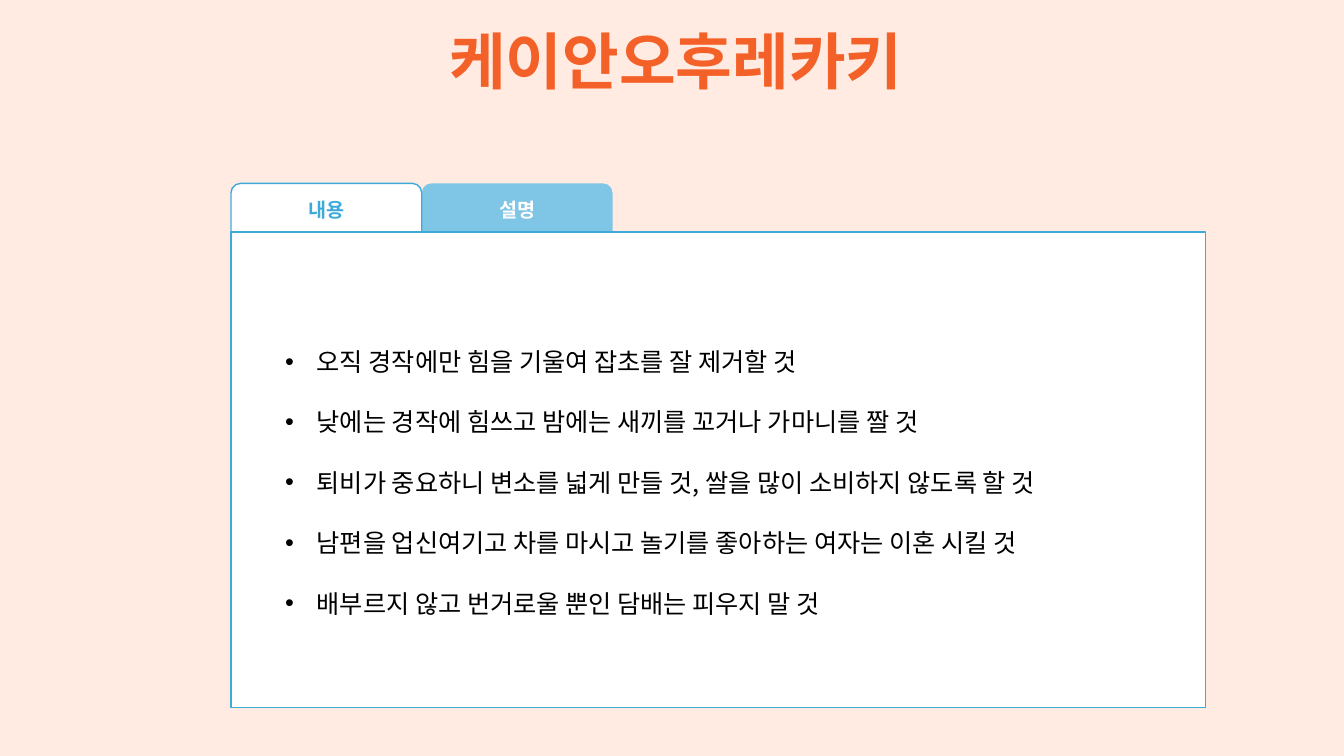
"""Build a slide with a title and a tabbed panel of bulleted rules."""
from pptx import Presentation
from pptx.dml.color import RGBColor
from pptx.enum.shapes import MSO_SHAPE as SHAPE
from pptx.enum.text import MSO_ANCHOR as ANCHOR, MSO_AUTO_SIZE as AUTO, PP_ALIGN as ALIGN
from pptx.oxml.ns import qn
from pptx.util import Pt
from lxml.etree import SubElement

FONT = "Noto Sans CJK KR"
PEACH = RGBColor(0xFF, 0xEB, 0xE2)
ORANGE = RGBColor(0xF4, 0x61, 0x28)
SKY = RGBColor(0x7F, 0xC6, 0xE6)
BLUE = RGBColor(0x3E, 0xAA, 0xDA)
WHITE = RGBColor(0xFF, 0xFF, 0xFF)
BLACK = RGBColor(0, 0, 0)

TITLE = "케이안오후레카키"
TABS = [
    ("내용", WHITE, BLUE, BLUE),
    ("설명", SKY, None, WHITE),
]
RULES = [
    "오직 경작에만 힘을 기울여 잡초를 잘 제거할 것",
    "낮에는 경작에 힘쓰고 밤에는 새끼를 꼬거나 가마니를 짤 것",
    "퇴비가 중요하니 변소를 넓게 만들 것, 쌀을 많이 소비하지 않도록 할 것",
    "남편을 업신여기고 차를 마시고 놀기를 좋아하는 여자는 이혼 시킬 것",
    "배부르지 않고 번거로울 뿐인 담배는 피우지 말 것",
]
LEFT = 165
TAB_TOP, TAB_W, TAB_H = 131, 136.3, 36
PANEL = (LEFT, 165.6, 696.2, 339.8)
TITLE_BOX = (298, 13, 370, 60.5)
RULES_BOX = (196.6, 224.6, 571, 218.2)
INDENT = 22.5


def add_run(p, text, size, color, bold=False):
    r = p.add_run()
    r.text = text
    r.font.size, r.font.bold, r.font.name = Pt(size), bold, FONT
    r.font.color.rgb = color
    SubElement(r.font._element, qn("a:ea")).set("typeface", FONT)


def add_box(slide, kind, box, fill, line):
    sp = slide.shapes.add_shape(kind, *map(Pt, box))
    sp.shadow.inherit = False
    sp.fill.solid()
    sp.fill.fore_color.rgb = fill
    if line is None:
        sp.line.fill.background()
    else:
        sp.line.color.rgb = line
        sp.line.width = Pt(1)
    return sp


def add_bullet(p):
    pPr = p._p.get_or_add_pPr()
    pPr.set("marL", str(Pt(INDENT)))
    pPr.set("indent", str(-Pt(INDENT)))
    SubElement(pPr, qn("a:buFont")).set("typeface", "Arial")
    SubElement(pPr, qn("a:buChar")).set("char", "•")


def main():
    prs = Presentation()
    prs.slide_width, prs.slide_height = Pt(960), Pt(540)
    slide = prs.slides.add_slide(prs.slide_layouts[6])
    slide.background.fill.solid()
    slide.background.fill.fore_color.rgb = PEACH

    tf = slide.shapes.add_textbox(*map(Pt, TITLE_BOX)).text_frame
    tf.word_wrap = False
    tf.auto_size = AUTO.SHAPE_TO_FIT_TEXT
    tf.paragraphs[0].alignment = ALIGN.CENTER
    add_run(tf.paragraphs[0], TITLE, 44, ORANGE, True)

    for i, (label, fill, line, color) in reversed(list(enumerate(TABS))):
        box = (LEFT + i * TAB_W, TAB_TOP, TAB_W, TAB_H)
        sp = add_box(slide, SHAPE.ROUND_2_SAME_RECTANGLE, box, fill, line)
        sp.adjustments[0] = 0.19
        sp.text_frame.vertical_anchor = ANCHOR.MIDDLE
        p = sp.text_frame.paragraphs[0]
        p.alignment = ALIGN.CENTER
        add_run(p, label, 14, color, True)

    add_box(slide, SHAPE.RECTANGLE, PANEL, WHITE, BLUE)

    tf = slide.shapes.add_textbox(*map(Pt, RULES_BOX)).text_frame
    tf.word_wrap = True
    tf.vertical_anchor = ANCHOR.MIDDLE
    for i, rule in enumerate(RULES):
        p = tf.add_paragraph() if i else tf.paragraphs[0]
        p.line_spacing = 2.0
        add_bullet(p)
        add_run(p, rule, 18, BLACK)

    prs.save("out.pptx")


if __name__ == "__main__":
    main()
